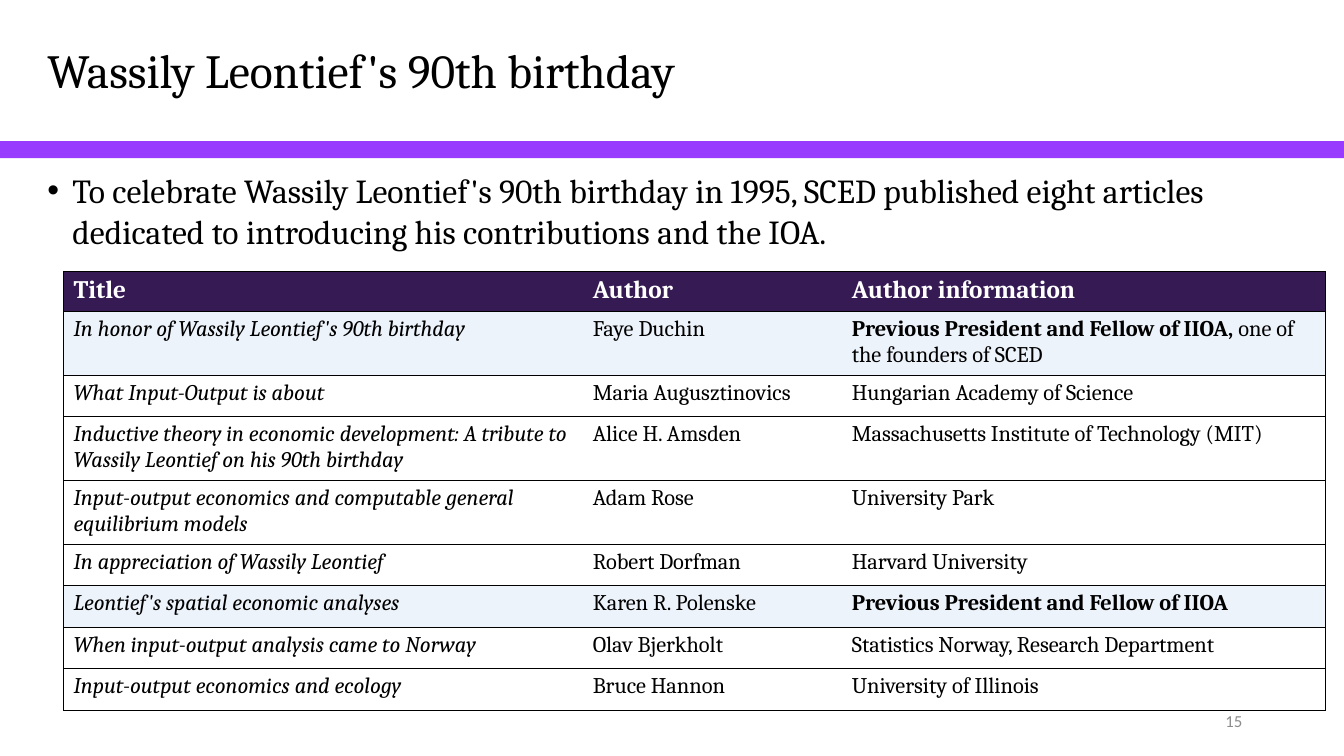
from lxml.etree import SubElement
from pptx import Presentation
from pptx.dml.color import RGBColor
from pptx.enum.shapes import MSO_SHAPE
from pptx.enum.text import MSO_ANCHOR, PP_ALIGN
from pptx.oxml import parse_xml
from pptx.oxml.ns import nsdecls, qn
from pptx.util import Inches, Pt

WIDTH, HEIGHT = Inches(13.33), Inches(7.5)
BLACK, WHITE, GREY = "000000", "FFFFFF", "8C8C8C"
VIOLET, DARK_PURPLE, PALE_BLUE = "993AFF", "361A54", "EDF3FB"
LEFT_MARGIN = 2.78

# Table content: title, author, runs of author information as (text, bold)
HEADINGS = ["Title", "Author", "Author information"]
COLUMN_SHARES = [38.63, 19.28, 36.01]
HEADER_SHARE, ROW_SHARE = 5.33, 5.47
ARTICLES = [
    ("In honor of Wassily Leontief's 90th birthday", "Faye Duchin",
     [("Previous President and Fellow of IIOA, ", True), ("one of the founders of SCED", False)]),
    ("What Input-Output is about", "Maria Augusztinovics",
     [("Hungarian Academy of Science", False)]),
    ("Inductive theory in economic development: A tribute to Wassily Leontief on his 90th birthday",
     "Alice H. Amsden", [("Massachusetts Institute of Technology (MIT)", False)]),
    ("Input-output economics and computable general equilibrium models", "Adam Rose",
     [("University Park", False)]),
    ("In appreciation of Wassily Leontief", "Robert Dorfman",
     [("Harvard University", False)]),
    ("Leontief's spatial economic analyses", "Karen R. Polenske",
     [("Previous President and Fellow of IIOA", True)]),
    ("When input-output analysis came to Norway", "Olav Bjerkholt",
     [("Statistics Norway, Research Department", False)]),
    ("Input-output economics and ecology", "Bruce Hannon",
     [("University of Illinois", False)]),
]


def across(percent):
    return round(WIDTH * percent / 100)


def down(percent):
    return round(HEIGHT * percent / 100)


def box(left, top, width, height):
    """Turn percentages of the slide into a position and a size."""
    return across(left), down(top), across(width), down(height)


def color(hex_string):
    return RGBColor.from_string(hex_string)


def add_text(paragraph, text, size=16, font="Cambria", fill=BLACK, bold=False, italic=False):
    run = paragraph.add_run()
    run.text = text
    run.font.name, run.font.size = font, Pt(size)
    run.font.bold, run.font.italic = bold, italic
    run.font.color.rgb = color(fill)


def add_text_box(slide, place, anchor=MSO_ANCHOR.TOP):
    frame = slide.shapes.add_textbox(*place).text_frame
    frame.word_wrap = True
    frame.vertical_anchor = anchor
    return frame.paragraphs[0]


def add_title(slide, text):
    title = slide.shapes.title
    title.left, title.top, title.width, title.height = box(LEFT_MARGIN, 0, 94.6, 19.33)
    title.text_frame.vertical_anchor = MSO_ANCHOR.MIDDLE
    paragraph = title.text_frame.paragraphs[0]
    paragraph.alignment = PP_ALIGN.LEFT
    paragraph.line_spacing = 0.9
    add_text(paragraph, text, size=34)


def add_band(slide):
    band = slide.shapes.add_shape(MSO_SHAPE.RECTANGLE, *box(0, 18.67, 100, 2.27))
    band.shadow.inherit = False
    band.fill.solid()
    band.fill.fore_color.rgb = color(VIOLET)
    band.line.fill.background()


def add_bullet(slide, text):
    paragraph = add_text_box(slide, box(LEFT_MARGIN, 21.87, 97.22, 13.07))
    properties = paragraph._p.get_or_add_pPr()
    properties.set("marL", str(Inches(0.25)))
    properties.set("indent", str(-Inches(0.25)))
    SubElement(properties, qn("a:buFont"), typeface="Arial")
    SubElement(properties, qn("a:buChar"), char="•")
    add_text(paragraph, text, size=24)


def set_borders(cell, visible_sides):
    properties = cell._tc.get_or_add_tcPr()
    for position, side in enumerate("LRTB"):
        paint = "<a:noFill/>"
        if side in visible_sides:
            paint = f'<a:solidFill><a:srgbClr val="{BLACK}"/></a:solidFill>'
        line = parse_xml(f'<a:ln{side} {nsdecls("a")} w="{Pt(0.5)}">{paint}</a:ln{side}>')
        properties.insert(position, line)


def fill_cell(cell, runs, background=None, **text_format):
    if background:
        cell.fill.solid()
        cell.fill.fore_color.rgb = color(background)
    else:
        cell.fill.background()
    for text, bold in runs:
        add_text(cell.text_frame.paragraphs[0], text, bold=bold, **text_format)


def add_article_table(slide):
    row_shares = [HEADER_SHARE] + [ROW_SHARE] * len(ARTICLES)
    place = box(4.73, 35.87, sum(COLUMN_SHARES), sum(row_shares))
    table = slide.shapes.add_table(len(row_shares), len(COLUMN_SHARES), *place).table
    for column, share in zip(table.columns, COLUMN_SHARES):
        column.width = across(share)
    for row, share in zip(table.rows, row_shares):
        row.height = down(share)

    # Heading row
    for index, heading in enumerate(HEADINGS):
        fill_cell(table.cell(0, index), [(heading, True)], DARK_PURPLE, size=18, fill=WHITE)

    # Article rows, shaded where the author was president
    for index, (title, author, information) in enumerate(ARTICLES, start=1):
        is_president = any(bold for _, bold in information)
        background = PALE_BLUE if is_president else None
        fill_cell(table.cell(index, 0), [(title, False)], background, italic=True)
        fill_cell(table.cell(index, 1), [(author, False)], background)
        fill_cell(table.cell(index, 2), information, background)

    # Horizontal rules and an outer frame
    for row in table.rows:
        for cell, sides in zip(row.cells, ("LTB", "TB", "RTB")):
            set_borders(cell, sides)


def add_page_number(slide, number):
    paragraph = add_text_box(slide, box(70.67, 92.67, 22.5, 5.33), MSO_ANCHOR.MIDDLE)
    paragraph.alignment = PP_ALIGN.RIGHT
    add_text(paragraph, number, size=12, font="Calibri", fill=GREY)


def main():
    presentation = Presentation()
    presentation.slide_width, presentation.slide_height = WIDTH, HEIGHT
    slide = presentation.slides.add_slide(presentation.slide_layouts.get_by_name("Title Only"))
    add_band(slide)
    add_title(slide, "Wassily Leontief's 90th birthday")
    add_bullet(slide, "To celebrate Wassily Leontief's 90th birthday in 1995, SCED published eight "
                      "articles dedicated to introducing his contributions and the IOA.")
    add_article_table(slide)
    add_page_number(slide, "15")
    presentation.save("out.pptx")


if __name__ == "__main__":
    main()
